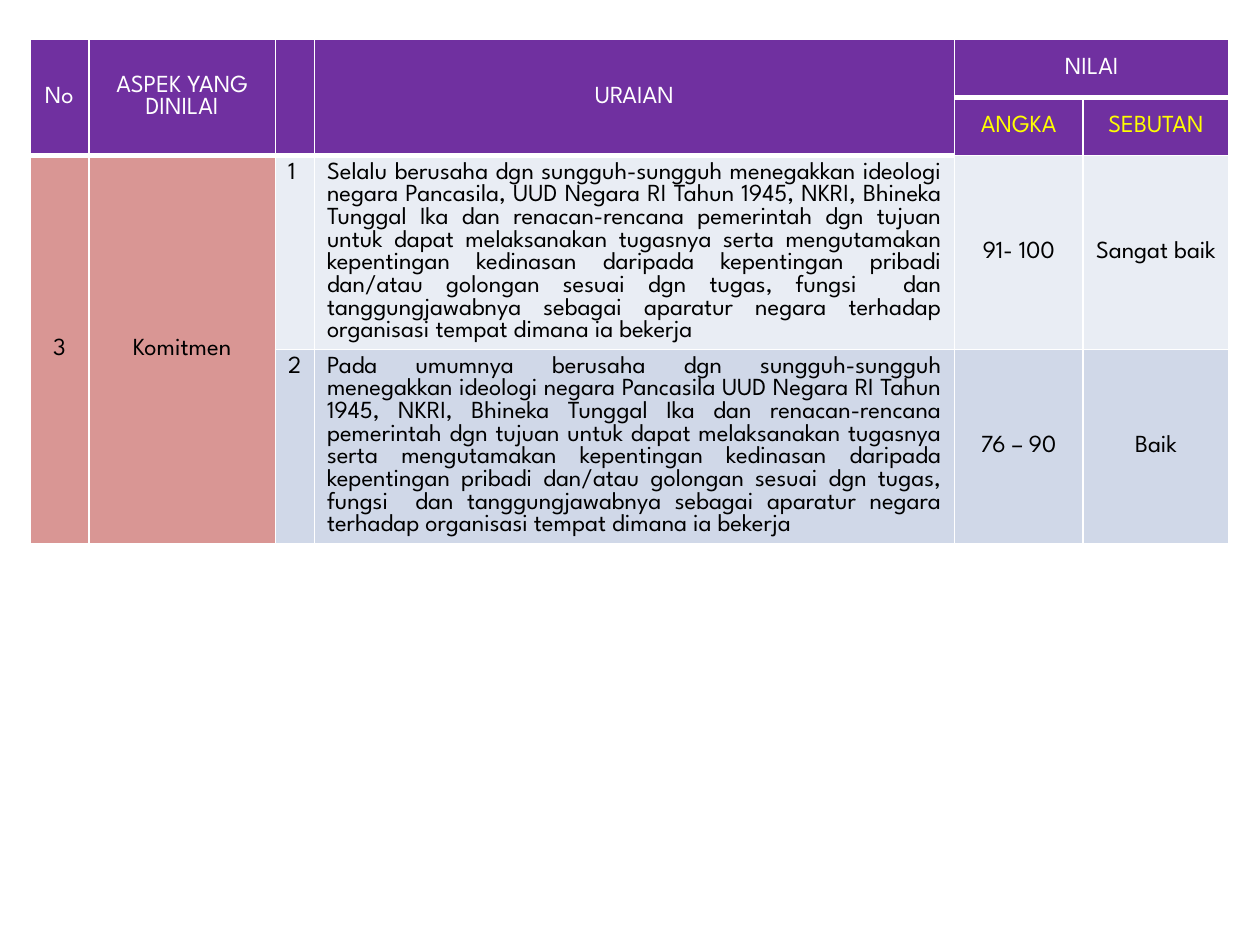
from lxml import etree
from pptx import Presentation
from pptx import util as u
from pptx.dml.color import RGBColor
from pptx.enum import text as t
from pptx.oxml import ns

FONT = "League Spartan"
PURPLE, ROSE = "7030A0", "D99694"
PALE, BLUE = "E9EDF4", "D0D8E8"
WHITE, BLACK, YELLOW = "FFFFFF", "000000", "FFFF00"
MID, LEFT, JUST = t.PP_ALIGN.CENTER, t.PP_ALIGN.LEFT, t.PP_ALIGN.JUSTIFY

WIDTHS = [33.8, 106.6, 22.3, 365.8, 73.4, 83.5]
HEIGHTS = [33.2, 33.2, 110, 110]

# Wording shared by both levels of commitment
TAIL = (
    "NKRI, Bhineka Tunggal Ika dan renacan-rencana pemerintah dgn tujuan "
    "untuk dapat melaksanakan tugasnya serta mengutamakan kepentingan "
    "kedinasan daripada kepentingan pribadi dan/atau golongan sesuai dgn "
    "tugas, fungsi  dan tanggungjawabnya sebagai aparatur negara terhadap "
    "organisasi tempat dimana ia bekerja"
)
LEVELS = [
    ("1", "Selalu berusaha dgn sungguh-sungguh menegakkan ideologi negara "
     "Pancasila, UUD Negara RI Tahun 1945, " + TAIL, "91- 100", "Sangat baik"),
    ("2", "Pada umumnya berusaha dgn sungguh-sungguh menegakkan ideologi negara "
     "Pancasila UUD Negara RI Tahun 1945, " + TAIL, "76 – 90", "Baik"),
]


def paint(color, hue):
    color.rgb = RGBColor.from_string(hue)


def write(cell, words, hue=BLACK, align=MID, size=14):
    para = cell.text_frame.paragraphs[0]
    para.alignment = align
    run = para.add_run()
    run.text = words
    run.font.name, run.font.size, run.font.bold = FONT, u.Pt(size), False
    paint(run.font.color, hue)
    cell.vertical_anchor = (
        t.MSO_ANCHOR.MIDDLE if align == MID else t.MSO_ANCHOR.TOP)


def edge(cell, base=1):
    props = cell._tc.get_or_add_tcPr()
    for pos, side in enumerate(("L", "R", "T", "B")):
        width = base if side == "B" else 1
        line = etree.Element(ns.qn("a:ln" + side), w=str(u.Pt(width)))
        fill = etree.SubElement(line, ns.qn("a:solidFill"))
        etree.SubElement(fill, ns.qn("a:srgbClr"), val=WHITE)
        props.insert(pos, line)


def shade(grid):
    for row in range(len(HEIGHTS)):
        for col in range(len(WIDTHS)):
            cell = grid.cell(row, col)
            if row < 2:
                hue = PURPLE
            elif col < 2:
                hue = ROSE
            else:
                hue = PALE if row == 2 else BLUE
            cell.fill.solid()
            paint(cell.fill.fore_color, hue)
            edge(cell, 3 if row == 0 else 1)


def make_grid(slide):
    frame = slide.shapes.add_table(
        len(HEIGHTS), len(WIDTHS), u.Pt(17), u.Pt(22.6),
        u.Pt(sum(WIDTHS)), u.Pt(sum(HEIGHTS)))
    grid = frame.table
    for col, width in zip(grid.columns, WIDTHS):
        col.width = u.Pt(width)
    for row, height in zip(grid.rows, HEIGHTS):
        row.height = u.Pt(height)
    shade(grid)
    # Tall cells in the heading and the aspect columns, wide score heading
    for col in range(4):
        grid.cell(0, col).merge(grid.cell(1, col))
    for col in range(2):
        grid.cell(2, col).merge(grid.cell(3, col))
    grid.cell(0, 4).merge(grid.cell(0, 5))
    return grid


def main():
    deck = Presentation()
    deck.slide_width, deck.slide_height = u.Pt(720), u.Pt(540)
    slide = deck.slides.add_slide(deck.slide_layouts[6])
    grid = make_grid(slide)

    # Headings
    heads = {0: "No", 1: "ASPEK YANG DINILAI", 3: "URAIAN", 4: "NILAI"}
    for col, words in heads.items():
        write(grid.cell(0, col), words, hue=WHITE)
    for col, words in enumerate(("ANGKA", "SEBUTAN"), 4):
        write(grid.cell(1, col), words, hue=YELLOW)

    # Aspect and its levels
    for col, words in enumerate(("3", "Komitmen")):
        write(grid.cell(2, col), words)
    for row, level in enumerate(LEVELS, 2):
        for col, (words, align) in enumerate(
                zip(level, (LEFT, JUST, MID, MID)), 2):
            write(grid.cell(row, col), words, align=align)

    deck.save("out.pptx")


if __name__ == "__main__":
    main()
